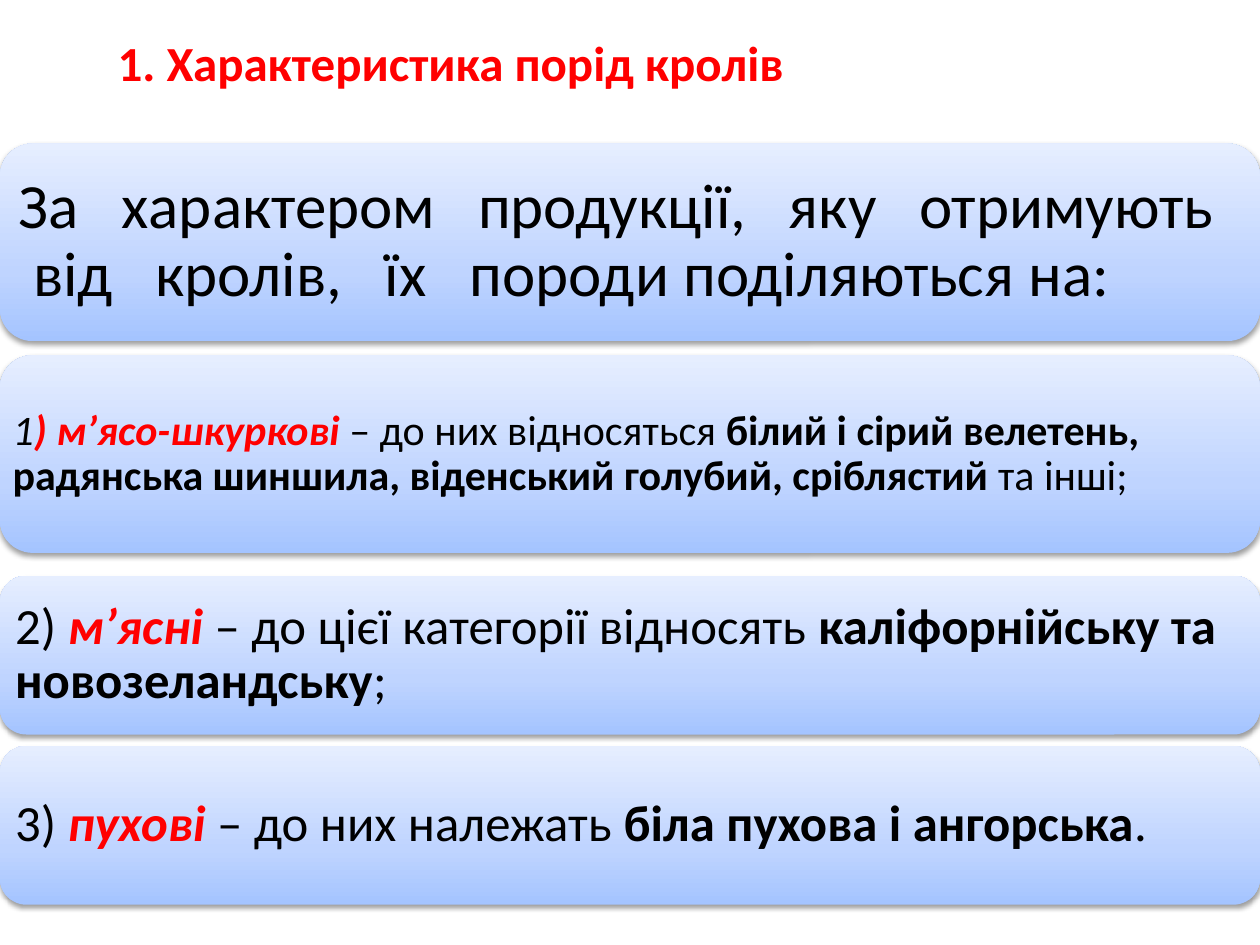
from copy import deepcopy

from lxml import etree
from pptx import Presentation
from pptx.dml.color import RGBColor
from pptx.enum.shapes import MSO_SHAPE
from pptx.enum.text import MSO_ANCHOR, MSO_AUTO_SIZE, PP_ALIGN
from pptx.oxml.ns import qn
from pptx.util import Pt

ROUNDED = MSO_SHAPE.ROUNDED_RECTANGLE
TOP, MIDDLE = MSO_ANCHOR.TOP, MSO_ANCHOR.MIDDLE
LEFT = PP_ALIGN.LEFT
NO_FIT = MSO_AUTO_SIZE.NONE

RED = RGBColor(0xFF, 0, 0)
BLACK = RGBColor(0, 0, 0)
PANEL_STOPS = [
    (0, RGBColor(0xA4, 0xC4, 0xFF)),
    (0.35, RGBColor(0xBF, 0xD4, 0xFF)),
    (1, RGBColor(0xE6, 0xEE, 0xFF)),
]

FONT = "Calibri"
CORNER_RATIO = 0.16667 * 0.29289

TITLE = "1. Характеристика порід кролів"
MEAT_AND_FUR = [
    (36, 10.8, [("За   характером   продукції,   яку   отримують   від   кролів,   їх   породи поділяються на:", {})]),
    (24, 7.2, [
        ("1", {"italic": True}),
        (") м’ясо-шкуркові ", {"color": RED, "bold": True, "italic": True}),
        ("– до них відносяться ", {}),
        ("білий і сірий велетень, радянська шиншила, віденський голубий, сріблястий ", {"bold": True}),
        ("та інші;", {}),
    ]),
]
MEAT_AND_DOWN = [
    (29, 8.64, [
        ("2) ", {}),
        ("м’ясні ", {"color": RED, "bold": True, "italic": True}),
        ("– до цієї категорії відносять ", {}),
        ("каліфорнійську та новозеландську", {"bold": True}),
        (";", {}),
    ]),
    (29, 8.64, [
        ("3) ", {}),
        ("пухові ", {"color": RED, "bold": True, "italic": True}),
        ("– до них належать ", {}),
        ("біла пухова і ангорська", {"bold": True}),
        (".", {}),
    ]),
]


def add_text(paragraph, text, size, color=BLACK, bold=False, italic=False):
    run = paragraph.add_run()
    run.text = text
    font = run.font
    font.name, font.size = FONT, Pt(size)
    font.bold, font.italic = bold, italic
    font.color.rgb = color


def place_title(slide, left, top, width, height):
    title = slide.shapes.title
    title.left, title.top = Pt(left), Pt(top)
    title.width, title.height = Pt(width), Pt(height)
    frame = title.text_frame
    frame.auto_size = NO_FIT
    frame.vertical_anchor = TOP
    frame.paragraphs[0].alignment = LEFT
    add_text(frame.paragraphs[0], TITLE, 28, color=RED, bold=True)


def style_panel(panel):
    panel.line.fill.background()
    panel.fill.gradient()
    panel.fill.gradient_angle = 90
    properties = panel.element.spPr
    stop_list = properties.find(".//" + qn("a:gsLst"))
    stop_list.append(deepcopy(stop_list[0]))
    for stop, (position, color) in zip(panel.fill.gradient_stops, PANEL_STOPS):
        stop.position = position
        stop.color.rgb = color

    panel.shadow.inherit = False
    effects = properties.find(qn("a:effectLst"))
    shadow = etree.SubElement(
        effects, qn("a:outerShdw"), blurRad=str(Pt(3.1)), dist=str(Pt(1.6)),
        dir="5400000", rotWithShape="0")
    shade = etree.SubElement(shadow, qn("a:srgbClr"), val=str(BLACK))
    etree.SubElement(shade, qn("a:alpha"), val="38000")


def place_panels(slide, panels, left, top, width, height, gap):
    panel_height = (height - gap * (len(panels) - 1)) / len(panels)
    for index, (size, inset, parts) in enumerate(panels):
        panel_top = top + index * (panel_height + gap)
        panel = slide.shapes.add_shape(
            ROUNDED, Pt(left), Pt(panel_top), Pt(width), Pt(panel_height))
        style_panel(panel)
        frame = panel.text_frame
        frame.word_wrap = True
        frame.vertical_anchor = MIDDLE
        margin = Pt(inset - panel_height * CORNER_RATIO)
        frame.margin_left = frame.margin_right = margin
        frame.margin_top = frame.margin_bottom = margin
        paragraph = frame.paragraphs[0]
        paragraph.alignment = LEFT
        paragraph.line_spacing = 0.9
        for text, style in parts:
            add_text(paragraph, text, size, **style)


def main():
    deck = Presentation()
    deck.slide_width, deck.slide_height = Pt(720), Pt(540)
    slide = deck.slides.add_slide(deck.slide_layouts[5])
    place_title(slide, 60, 15, 595, 41)
    place_panels(slide, MEAT_AND_FUR, 0, 82, 720, 234, gap=8)
    place_panels(slide, MEAT_AND_DOWN, 0, 329, 720, 188, gap=6.5)
    deck.save("out.pptx")


if __name__ == "__main__":
    main()
